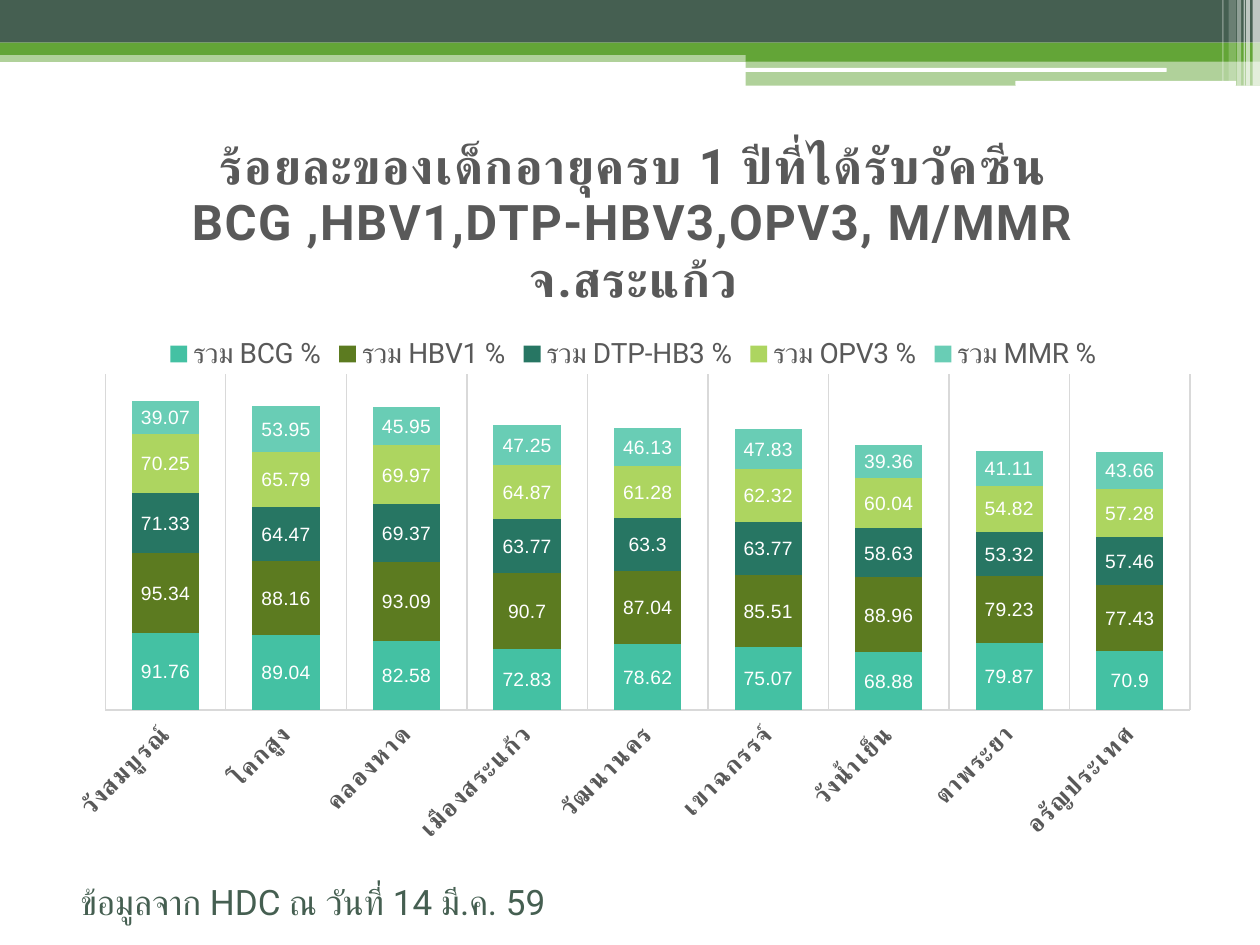
from dataclasses import dataclass

from lxml.etree import SubElement
from pptx import Presentation
from pptx.chart.data import CategoryChartData
from pptx.dml.color import RGBColor
from pptx.enum.chart import (XL_CHART_TYPE, XL_LABEL_POSITION, XL_LEGEND_POSITION,
                             XL_TICK_LABEL_POSITION, XL_TICK_MARK)
from pptx.enum.shapes import MSO_SHAPE
from pptx.oxml import parse_xml
from pptx.oxml.ns import nsdecls, qn
from pptx.util import Cm, Pt


@dataclass(frozen=True)
class Theme:
    dark: str = "455F51"
    green: str = "63A537"
    white: str = "FFFFFF"
    gray: str = "595959"
    line: str = "D9D9D9"
    series: tuple = ("44C1A3", "5C7B20", "277663", "ADD560", "69CDB5")
    font: str = "Roboto"
    label_font: str = "Arial"
    title_size: int = 28
    note_size: int = 20
    legend_size: int = 16
    category_size: int = 14
    label_size: int = 11


THEME = Theme()


def set_attributes(target, values):
    for name, value in values.items():
        setattr(target, name, value)


def set_font(font, size, color, name=THEME.font, bold=False):
    set_attributes(font, {"size": Pt(size), "name": name, "bold": bold})
    font.color.rgb = RGBColor.from_string(color)


def set_line(line, color, width=0.75):
    line.color.rgb = RGBColor.from_string(color)
    line.width = Pt(width)


class SlideBuilder:
    def __init__(self, presentation, theme):
        self.theme = theme
        self.slide = presentation.slides.add_slide(presentation.slide_layouts[6])

    def bar(self, box, color, opacity=100, kind=MSO_SHAPE.RECTANGLE):
        shape = self.slide.shapes.add_shape(kind, *map(Cm, box))
        shape.shadow.inherit = False
        shape.fill.solid()
        shape.fill.fore_color.rgb = RGBColor.from_string(color)
        shape.line.fill.background()
        if opacity < 100:
            color_element = shape._element.spPr.find(qn("a:solidFill"))[0]
            SubElement(color_element, qn("a:alpha"), val=str(opacity * 1000))

    def note(self, box, text):
        frame = self.slide.shapes.add_textbox(*map(Cm, box)).text_frame
        frame.word_wrap = True
        paragraph = frame.paragraphs[0]
        paragraph.space_before = Pt(3)
        paragraph._p.get_or_add_pPr().set("marL", str(Cm(0.3)))
        run = paragraph.add_run()
        run.text = text
        set_font(run.font, self.theme.note_size, self.theme.dark)

    def stacked_chart(self, box, title, categories, series, plot_box):
        data = CategoryChartData()
        data.categories = categories
        for name, values in series.items():
            data.add_series(name, values)
        chart = self.slide.shapes.add_chart(
            XL_CHART_TYPE.COLUMN_STACKED, *map(Cm, box), data).chart
        set_font(chart.font, 10, "000000", self.theme.label_font)
        self.chart_title(chart, title)
        self.chart_legend(chart)
        self.chart_axes(chart)
        self.chart_series(chart.plots[0])
        self.plot_layout(chart, plot_box)

    def chart_title(self, chart, title):
        chart.has_title = True
        paragraph = chart.chart_title.text_frame.paragraphs[0]
        run = paragraph.add_run()
        run.text = title
        set_font(run.font, self.theme.title_size, self.theme.gray, bold=True)
        run.font._element.set("spc", "100")
        chart.chart_title.include_in_layout = False

    def chart_legend(self, chart):
        chart.has_legend = True
        set_attributes(chart.legend, {"position": XL_LEGEND_POSITION.TOP,
                                      "include_in_layout": False})
        set_font(chart.legend.font, self.theme.legend_size, self.theme.gray)

    def chart_axes(self, chart):
        set_attributes(chart.value_axis, {
            "minimum_scale": 0, "maximum_scale": 400,
            "has_major_gridlines": False, "visible": False})
        axis = chart.category_axis
        set_attributes(axis, {
            "has_major_gridlines": True,
            "major_tick_mark": XL_TICK_MARK.NONE,
            "minor_tick_mark": XL_TICK_MARK.NONE,
            "tick_label_position": XL_TICK_LABEL_POSITION.LOW})
        set_line(axis.format.line, self.theme.line)
        set_line(axis.major_gridlines.format.line, self.theme.line)
        font = axis.tick_labels.font
        set_font(font, self.theme.category_size, self.theme.gray, bold=True)
        font._element.set("spc", "100")
        text_body = axis._element.find(qn("c:txPr")).find(qn("a:bodyPr"))
        text_body.set("rot", str(-45 * 60000))
        text_body.set("vert", "horz")

    def chart_series(self, plot):
        set_attributes(plot, {"gap_width": 79, "overlap": 100, "vary_by_categories": False})
        for series, color in zip(plot.series, self.theme.series):
            series.invert_if_negative = False
            series.format.fill.solid()
            series.format.fill.fore_color.rgb = RGBColor.from_string(color)
            labels = series.data_labels
            set_attributes(labels, {"show_value": True,
                                    "position": XL_LABEL_POSITION.CENTER})
            set_font(labels.font, self.theme.label_size, self.theme.white,
                     self.theme.label_font)

    def plot_layout(self, chart, plot_box):
        plot_area = chart._chartSpace.chart.plotArea
        for layout in plot_area.findall(qn("c:layout")):
            plot_area.remove(layout)
        sizes = "".join(f'<c:{name} val="{value}"/>'
                        for name, value in zip("xywh", plot_box))
        plot_area.insert(0, parse_xml(
            f'<c:layout {nsdecls("c")}><c:manualLayout><c:layoutTarget val="inner"/>'
            f'<c:xMode val="edge"/><c:yMode val="edge"/>{sizes}'
            '</c:manualLayout></c:layout>'))


BANDS = [
    ((0, 1.02, 25.4, 0.23), THEME.green, 50),
    ((0, 0, 25.4, 0.86), THEME.dark, 100),
    ((0, 0.86, 25.4, 0.25), THEME.green, 100),
    ((15.03, 0.99, 10.37, 0.25), THEME.green, 100),
    ((15.03, 1.23, 10.37, 0.5), THEME.green, 50),
]
ROUNDED_BARS = [(15.01, 1.37, 8.51, 0.08), (20.47, 1.63, 4.45, 0.1)]
# Left, width, height, opacity
STRIPES = [
    (25.25, 0.15, 1.73, 65), (25.12, 0.08, 1.73, 65), (25.07, 0.03, 1.73, 60),
    (24.94, 0.08, 1.73, 40), (24.77, 0.15, 1.63, 20), (24.64, 0.03, 1.63, 30),
]
TITLE = "ร้อยละของเด็กอายุครบ 1 ปีที่ได้รับวัคซีน BCG ,HBV1,DTP-HBV3,OPV3, M/MMR จ.สระแก้ว"
DISTRICTS = ["วังสมบูรณ์", "โคกสูง", "คลองหาด", "เมืองสระแก้ว", "วัฒนานคร",
             "เขาฉกรรจ์", "วังน้ำเย็น", "ตาพระยา", "อรัญประเทศ"]
COVERAGE = {
    "รวม BCG %": (91.76, 89.04, 82.58, 72.83, 78.62, 75.07, 68.88, 79.87, 70.9),
    "รวม HBV1 %": (95.34, 88.16, 93.09, 90.7, 87.04, 85.51, 88.96, 79.23, 77.43),
    "รวม DTP-HB3 %": (71.33, 64.47, 69.37, 63.77, 63.3, 63.77, 58.63, 53.32, 57.46),
    "รวม OPV3 %": (70.25, 65.79, 69.97, 64.87, 61.28, 62.32, 60.04, 54.82, 57.28),
    "รวม MMR %": (39.07, 53.95, 45.95, 47.25, 46.13, 47.83, 39.36, 41.11, 43.66),
}


def main():
    presentation = Presentation()
    set_attributes(presentation, {"slide_width": Cm(25.4), "slide_height": Cm(19.05)})
    builder = SlideBuilder(presentation, THEME)

    # Header decoration
    for box, color, opacity in BANDS:
        builder.bar(box, color, opacity)
    for box in ROUNDED_BARS:
        builder.bar(box, THEME.white, kind=MSO_SHAPE.ROUNDED_RECTANGLE)
    for left, width, height, opacity in STRIPES:
        builder.bar((left, 0, width, height), THEME.white, opacity)

    # Source note and vaccine coverage chart
    builder.note((1.07, 17.63, 22.86, 1.09), "ข้อมูลจาก HDC ณ วันที่ 14 มี.ค. 59")
    builder.stacked_chart((1.07, 2.08, 23.39, 15.09), TITLE, DISTRICTS, COVERAGE,
                          plot_box=(0.045, 0.362, 0.935, 0.449))
    presentation.save("out.pptx")


if __name__ == "__main__":
    main()
